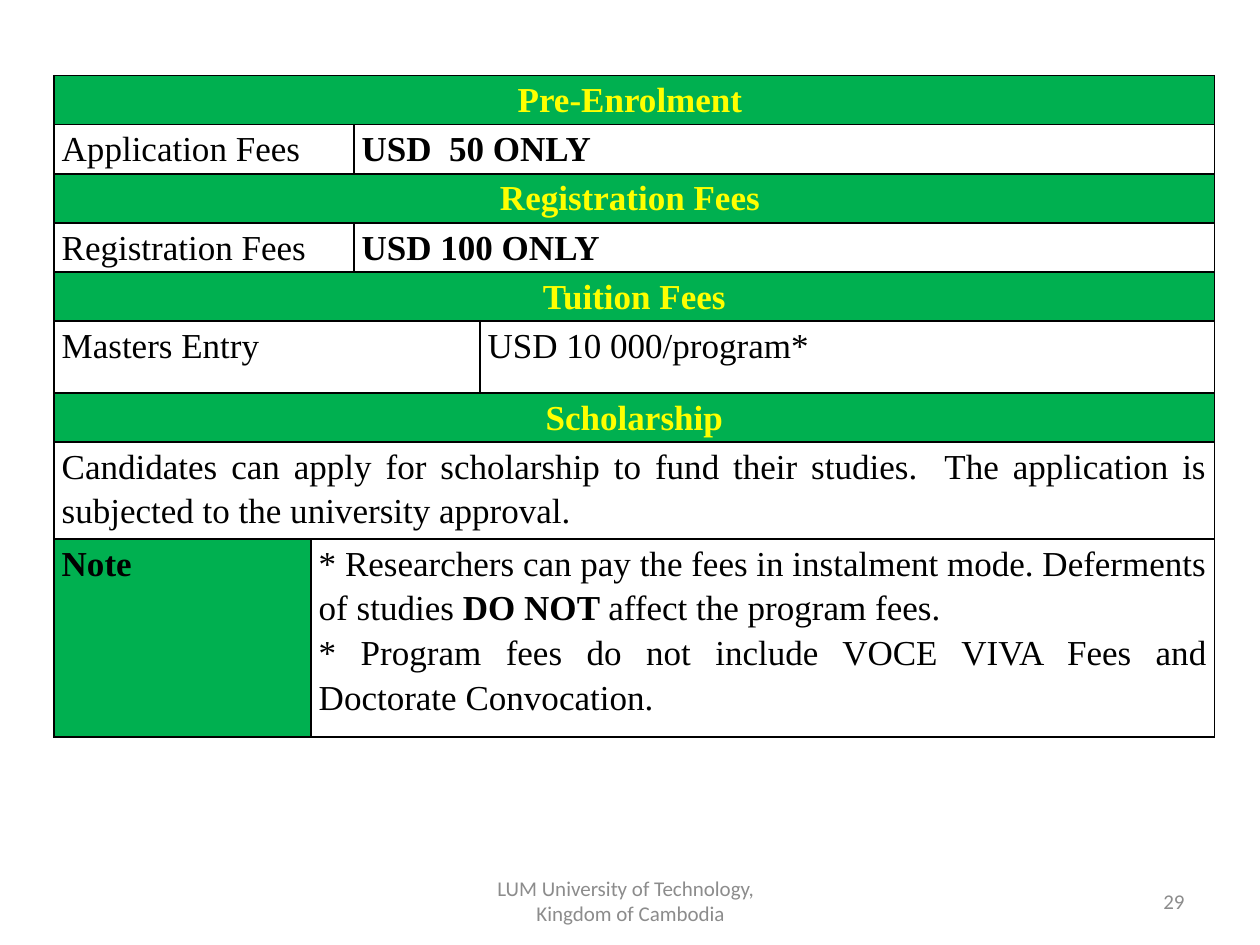
from lxml.etree import SubElement
from pptx import Presentation
from pptx.dml.color import RGBColor
from pptx.enum.text import MSO_ANCHOR, PP_ALIGN
from pptx.oxml.ns import qn
from pptx.util import Inches, Pt

COLORS = {"green": "00B050", "yellow": "FFFF00", "black": "000000", "gray": "8C8C8C"}
COLUMNS = [2.04, 0.34, 1, 5.83]
HEADER, ENTRY = 0.39, 0.39


class SlideBuilder:
    table_font = "Times New Roman"
    footer_font = "Calibri"
    table_size = 20
    footer_size = 12

    def __init__(self, slide):
        self.s = slide

    def format_run(self, r, font, size, color, bold=False):
        r.font.name = font
        r.font.size = Pt(size)
        r.font.bold = bold
        r.font.color.rgb = RGBColor.from_string(COLORS[color])

    def footer(self, left, width, text, align):
        sp = self.s.shapes.add_textbox(Inches(left), Inches(6.95), Inches(width), Inches(0.4))
        tf = sp.text_frame
        tf.word_wrap = True
        tf.vertical_anchor = MSO_ANCHOR.MIDDLE
        tf.text = text
        for p in tf.paragraphs:
            p.alignment = align
            for r in p.runs:
                self.format_run(r, self.footer_font, self.footer_size, "gray")

    def table(self, left, top, columns, heights):
        frame = self.s.shapes.add_table(
            len(heights), len(columns), Inches(left), Inches(top),
            Inches(sum(columns)), Inches(sum(heights)))
        tbl = frame.table
        tbl.first_row = tbl.horz_banding = False
        for column, width in zip(tbl.columns, columns):
            column.width = Inches(width)
        for row, height in zip(tbl.rows, heights):
            row.height = Inches(height)
        for cell in tbl.iter_cells():
            self.borders(cell)
            cell.fill.background()
        return tbl

    def borders(self, cell):
        tcPr = cell._tc.get_or_add_tcPr()
        for side in ("a:lnL", "a:lnR", "a:lnT", "a:lnB"):
            ln = SubElement(tcPr, qn(side), w=str(Pt(1)))
            fill = SubElement(ln, qn("a:solidFill"))
            SubElement(fill, qn("a:srgbClr"), val=COLORS["black"])

    def cell(self, tbl, row, first, last, paragraphs, color="black",
             align=PP_ALIGN.JUSTIFY, fill=None):
        cell = tbl.cell(row, first)
        if last > first:
            cell.merge(tbl.cell(row, last))
        cell.margin_left = cell.margin_right = Inches(0.06)
        cell.margin_top = cell.margin_bottom = 0
        if fill:
            cell.fill.solid()
            cell.fill.fore_color.rgb = RGBColor.from_string(COLORS[fill])
        tf = cell.text_frame
        for i, runs in enumerate(paragraphs):
            p = tf.add_paragraph() if i else tf.paragraphs[0]
            p.alignment = align
            p.line_spacing = 1.15
            for text, bold in runs:
                r = p.add_run()
                r.text = text
                self.format_run(r, self.table_font, self.table_size, color, bold)

    def header(self, tbl, row, text):
        self.cell(tbl, row, 0, len(COLUMNS) - 1, [[(text, True)]],
                  "yellow", PP_ALIGN.CENTER, "green")

    def entry(self, tbl, row, split, label, value, bold):
        self.cell(tbl, row, 0, split - 1, [[(label, False)]])
        self.cell(tbl, row, split, len(COLUMNS) - 1, [[(value, bold)]])


def main():
    prs = Presentation()
    prs.slide_width, prs.slide_height = Inches(10), Inches(7.5)
    b = SlideBuilder(prs.slides.add_slide(prs.slide_layouts[6]))

    tbl = b.table(0.43, 0.6, COLUMNS,
                  [HEADER, ENTRY, HEADER, ENTRY, HEADER, 0.57, HEADER, 0.77, 1.57])
    headers = ["Pre-Enrolment ", "Registration Fees ", "Tuition Fees", "Scholarship"]
    for i, text in enumerate(headers):
        b.header(tbl, 2 * i, text)
    entries = [
        (2, "Application Fees", "USD  50 ONLY", True),
        (2, "Registration Fees", "USD 100 ONLY", True),
        (3, "Masters Entry", "USD 10 000/program*", False),
    ]
    for i, entry in enumerate(entries):
        b.entry(tbl, 2 * i + 1, *entry)
    b.cell(tbl, 7, 0, 3, [[(
        "Candidates can apply for scholarship to fund their studies.  "
        "The application is subjected to the university approval.", False)]])
    b.cell(tbl, 8, 0, 0, [[("Note", True)]], fill="green")
    b.cell(tbl, 8, 1, 3, [
        [("* Researchers can pay the fees in instalment mode. Deferments of studies ", False),
         ("DO NOT ", True), ("affect the program fees.", False)],
        [("* Program fees do not include VOCE VIVA Fees and Doctorate Convocation.", False)],
    ])

    b.footer(3.42, 3.17, "LUM University of Technology,  \nKingdom of Cambodia", PP_ALIGN.CENTER)
    b.footer(7.17, 2.33, "29", PP_ALIGN.RIGHT)
    prs.save("out.pptx")


if __name__ == "__main__":
    main()
